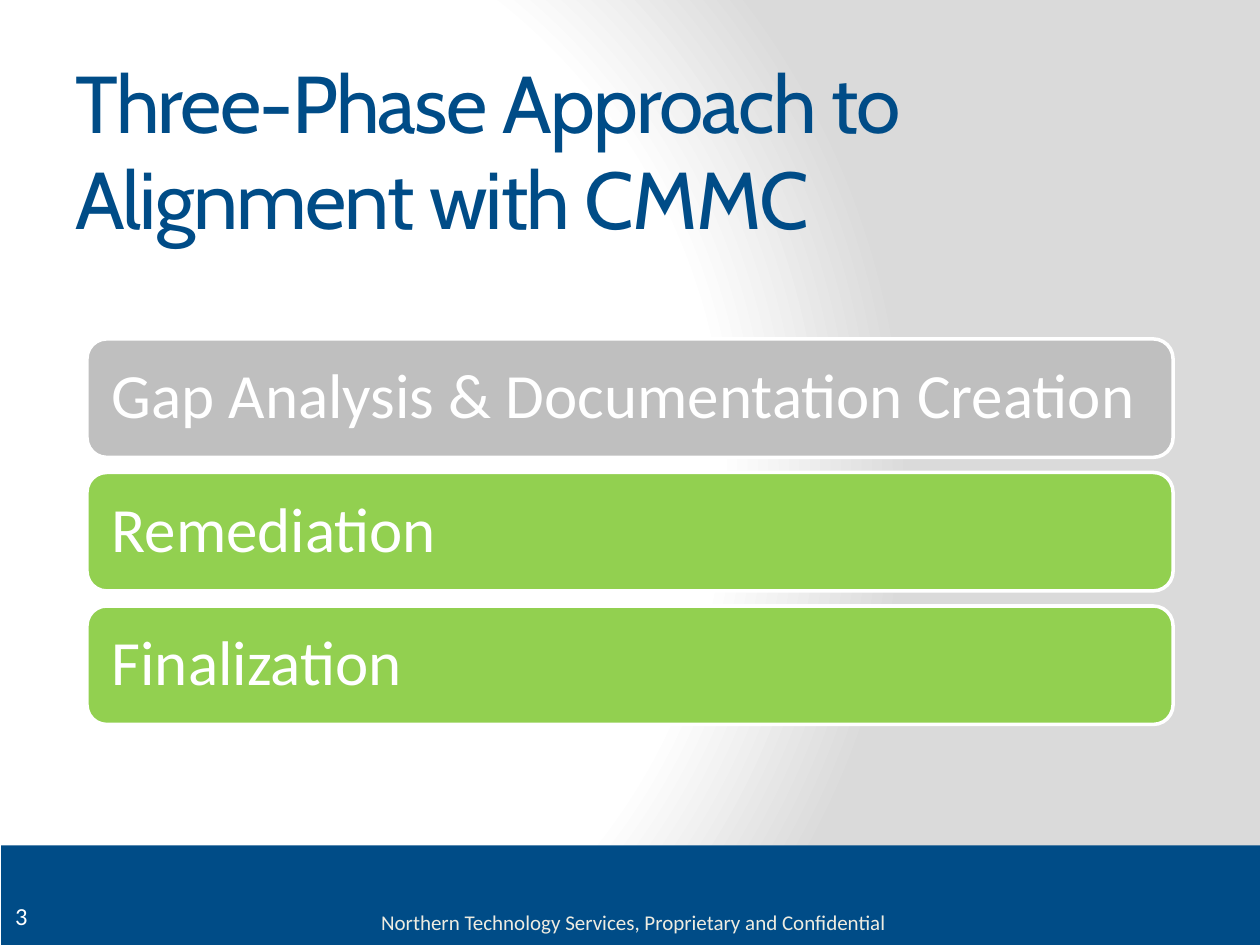
from lxml import etree
from pptx import Presentation
from pptx.dml.color import RGBColor
from pptx.enum import shapes, text
from pptx.oxml.ns import qn
from pptx.util import Inches, Pt

WIDTH, HEIGHT = 10, 7.5
BLUE, WHITE, CREAM = "004C87", "FFFFFF", "EEECE1"
GREY, GREEN = "BFBFBF", "92D050"

TITLE = "Three-Phase Approach to Alignment with CMMC"
PHASES = [
    ("Gap Analysis & Documentation Creation", GREY),
    ("Remediation", GREEN),
    ("Finalization", GREEN),
]
FOOTER = "Northern Technology Services, Proprietary and Confidential"
PAGE_NUMBER = "3"

BACKGROUND_STOPS = [(0, WHITE), (75, WHITE), (100, "DADADA")]
BACKGROUND_FOCUS = {"l": 20, "t": 50, "r": 100, "b": 50}

PHASE_LEFT, PHASE_TOP = 0.69, 2.69
PHASE_HEIGHT, PHASE_PITCH = 0.94, 1.06


def color(value):
    return RGBColor.from_string(value)


def box(left, top, width, height):
    return [Inches(length) for length in (left, top, width, height)]


def write(shape, words, size, ink, font="Calibri", align=text.PP_ALIGN.LEFT,
          anchor=text.MSO_ANCHOR.MIDDLE, inset=None):
    frame = shape.text_frame
    frame.word_wrap = True
    frame.vertical_anchor = anchor
    if inset is not None:
        frame.margin_left = frame.margin_right = Inches(inset)
        frame.margin_top = frame.margin_bottom = Inches(inset)
    paragraph = frame.paragraphs[0]
    paragraph.text = words
    paragraph.alignment = align
    paragraph.font.size = Pt(size)
    paragraph.font.name = font
    paragraph.font.color.rgb = color(ink)
    return paragraph


def add_shape(slide, kind, place, fill=None, line=None):
    shape = slide.shapes.add_shape(kind, *box(*place))
    shape.shadow.inherit = False
    if fill:
        shape.fill.solid()
        shape.fill.fore_color.rgb = color(fill)
    else:
        shape.fill.background()
    if line:
        shape.line.color.rgb = color(line)
        shape.line.width = Pt(2)
    else:
        shape.line.fill.background()
    return shape


def set_radial_background(slide):
    fill = slide.background.fill
    fill.gradient()
    gradient = slide.background._cSld.find(".//" + qn("a:gradFill"))
    for child in list(gradient):
        gradient.remove(child)
    stops = etree.SubElement(gradient, qn("a:gsLst"))
    for position, value in BACKGROUND_STOPS:
        stop = etree.SubElement(stops, qn("a:gs"), pos=str(position * 1000))
        etree.SubElement(stop, qn("a:srgbClr"), val=value)
    circle = etree.SubElement(gradient, qn("a:path"), {"path": "circle"})
    etree.SubElement(circle, qn("a:fillToRect"),
                     {side: str(share * 1000) for side, share in BACKGROUND_FOCUS.items()})


def main():
    deck = Presentation()
    deck.slide_width, deck.slide_height = Inches(WIDTH), Inches(HEIGHT)
    slide = deck.slides.add_slide(deck.slide_layouts[6])
    set_radial_background(slide)

    add_shape(slide, shapes.MSO_SHAPE.RECTANGLE, (0.01, 6.71, WIDTH, 0.8), BLUE)
    footer = slide.shapes.add_textbox(*box(2.88, 7.12, 4.25, 0.4))
    write(footer, FOOTER, 12, CREAM, align=text.PP_ALIGN.RIGHT)
    number = add_shape(slide, shapes.MSO_SHAPE.DOUBLE_BRACKET, (0, 7.08, 0.6, 0.43))
    number.adjustments[0] = 0.18
    write(number, PAGE_NUMBER, 14, WHITE, anchor=text.MSO_ANCHOR.TOP)

    title = slide.shapes.add_textbox(*box(0.5, 0.62, 8.33, 1.13))
    heading = write(title, TITLE, 46, BLUE, font="Cabin")
    heading.runs[0].font._element.set("spc", "-100")

    for row, (phase, fill) in enumerate(PHASES):
        place = (PHASE_LEFT, PHASE_TOP + row * PHASE_PITCH,
                 WIDTH - 2 * PHASE_LEFT, PHASE_HEIGHT)
        bar = add_shape(slide, shapes.MSO_SHAPE.ROUNDED_RECTANGLE, place, fill, WHITE)
        label = write(bar, phase, 36, WHITE, inset=0.15)
        label.line_spacing = 0.9

    deck.save("out.pptx")


if __name__ == "__main__":
    main()
